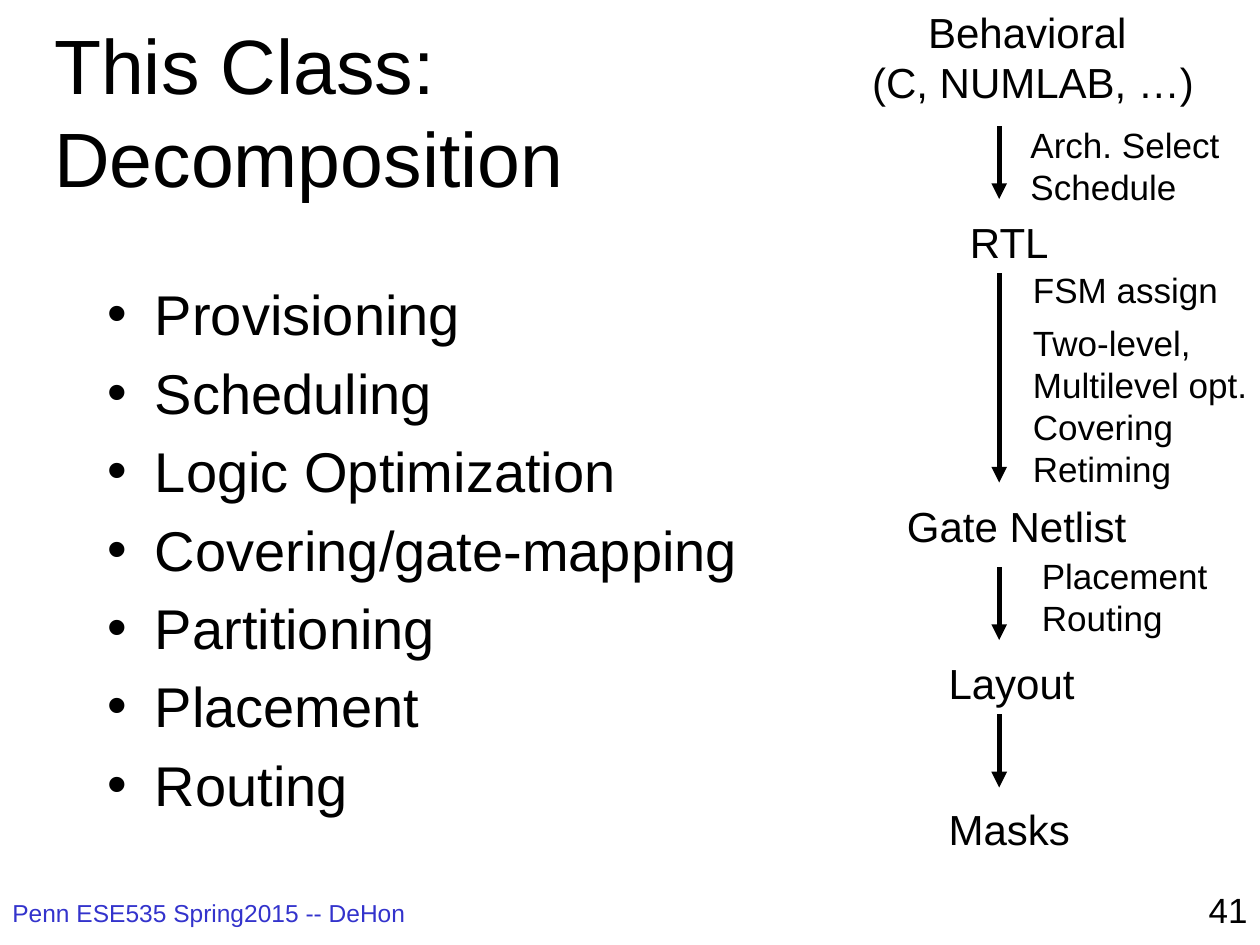
from lxml.etree import SubElement
from pptx import Presentation
from pptx.dml.color import RGBColor
from pptx.enum.shapes import MSO_CONNECTOR
from pptx.enum.text import MSO_ANCHOR, MSO_AUTO_SIZE, PP_ALIGN
from pptx.oxml.ns import qn
from pptx.util import Inches, Pt

COLORS = {"text": "000000", "footer": "3333CC"}
FONT = "Arial"

TOPICS = ["Provisioning", "Scheduling", "Logic Optimization",
          "Covering/gate-mapping", "Partitioning", "Placement", "Routing"]

STAGES = [
    (["Behavioral ", "(C, NUMLAB, …)"], (6.85, 0, 2.7, 0.9), PP_ALIGN.CENTER),
    (["RTL"], (7.6, 1.67, 0.83, 0.5), PP_ALIGN.LEFT),
    (["Gate Netlist"], (7.1, 3.92, 1.94, 0.5), PP_ALIGN.LEFT),
    (["Layout"], (7.43, 5.17, 1.2, 0.5), PP_ALIGN.LEFT),
    (["Masks"], (7.43, 6.33, 1.16, 0.5), PP_ALIGN.LEFT),
]
STEPS = [
    (["Arch. Select", "Schedule"], (8.08, 0.93, 1.7, 0.77)),
    (["FSM assign"], (8.1, 2.08, 1.67, 0.43)),
    (["Two-level,", "Multilevel opt.", "Covering", "Retiming"], (8.1, 2.5, 1.9, 1.43)),
    (["Placement", "Routing"], (8.17, 4.35, 1.51, 0.77)),
]
ARROW_X = 7.93
ARROW_SPANS = [(1, 1.58), (2.17, 3.83), (4.5, 5.08), (5.67, 6.25)]


def place(shape, box):
    shape.left, shape.top, shape.width, shape.height = map(Inches, box)


def add_bullet(para):
    properties = para._p.get_or_add_pPr()
    properties.set("marL", str(Inches(0.38)))
    properties.set("indent", str(Inches(-0.38)))
    SubElement(properties, qn("a:buChar"), char="•")


def write(shape, lines, size, color="text", align=PP_ALIGN.LEFT,
          anchor=MSO_ANCHOR.TOP, wrap=True, bullet=False, gap=0):
    frame = shape.text_frame
    frame.word_wrap = wrap
    frame.auto_size = MSO_AUTO_SIZE.NONE
    frame.vertical_anchor = anchor
    for index, line in enumerate(lines):
        para = frame.add_paragraph() if index else frame.paragraphs[0]
        para.text = line
        para.alignment = align
        para.space_before = Pt(gap if index else 0)
        if bullet:
            add_bullet(para)
        for span in para.runs:
            span.font.name = FONT
            span.font.size = Pt(size)
            span.font.color.rgb = RGBColor.from_string(COLORS[color])


def add_label(page, lines, box, size, **style):
    label = page.shapes.add_textbox(*map(Inches, box))
    write(label, lines, size, **style)


def add_arrow(page, x, top, bottom):
    arrow = page.shapes.add_connector(
        MSO_CONNECTOR.STRAIGHT, Inches(x), Inches(top), Inches(x), Inches(bottom))
    arrow.line.color.rgb = RGBColor.from_string(COLORS["text"])
    arrow.line.width = Pt(3)
    SubElement(arrow.line._get_or_add_ln(), qn("a:tailEnd"), type="triangle")
    SubElement(arrow._element.spPr, qn("a:effectLst"))


def fill_title(page, box):
    title = page.shapes.title
    place(title, box)
    write(title, ["This Class:\vDecomposition"], 44, anchor=MSO_ANCHOR.MIDDLE)


def fill_topics(page, box):
    body = page.placeholders[1]
    place(body, box)
    write(body, TOPICS, 32, bullet=True, gap=6.4)


def add_flow(page, box):
    left, top = box[:2]

    def shift(part):
        return (left + part[0], top + part[1], *part[2:])

    for lines, part, align in STAGES:
        add_label(page, lines, shift(part), 24, align=align, wrap=False)
    for start, end in ARROW_SPANS:
        add_arrow(page, left + ARROW_X, top + start, top + end)
    for lines, part in STEPS:
        add_label(page, lines, shift(part), 20, wrap=False)


def add_footer(page, box):
    left, top, width, height = box
    add_label(page, ["Penn ESE535 Spring2015 -- DeHon"],
              (left, top + 0.08, 3.83, height - 0.08), 14, color="footer")
    add_label(page, ["41"], (left + width - 2.08, top, 2.08, height), 20,
              align=PP_ALIGN.RIGHT)


def main():
    deck = Presentation()
    deck.slide_width, deck.slide_height = Inches(10), Inches(7.5)
    page = deck.slides.add_slide(deck.slide_layouts[1])
    add_footer(page, (0, 7, 10, 0.5))
    fill_title(page, (0.33, 0.25, 8.5, 1.25))
    fill_topics(page, (0.75, 2.17, 8.5, 4.5))
    add_flow(page, (0, 0, 10, 7))
    deck.save("out.pptx")


if __name__ == "__main__":
    main()
